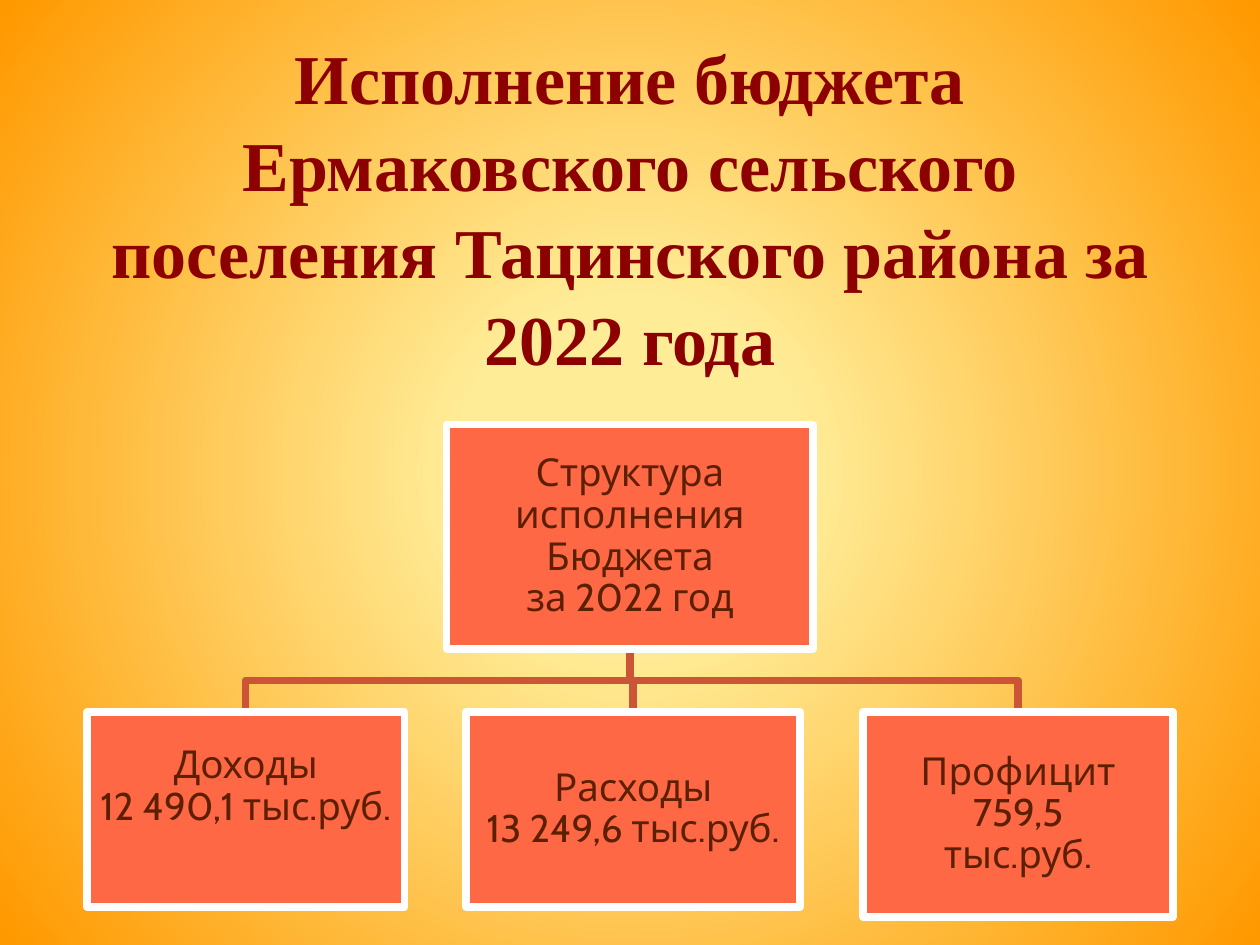
"""Builds a slide with the budget execution hierarchy of a rural settlement."""
from lxml import etree
from pptx import Presentation
from pptx.dml.color import RGBColor
from pptx.enum.shapes import MSO_SHAPE
from pptx.enum.text import MSO_ANCHOR, PP_ALIGN
from pptx.oxml import parse_xml
from pptx.util import Inches, Pt

RECTANGLE = MSO_SHAPE.RECTANGLE
MIDDLE = MSO_ANCHOR.MIDDLE
CENTER = PP_ALIGN.CENTER

PALE_YELLOW = RGBColor(0xFF, 0xEC, 0x97)
ORANGE = RGBColor(0xFF, 0x99, 0x00)
DARK_RED = RGBColor(0x8C, 0x00, 0x00)
CORAL = RGBColor(0xFF, 0x68, 0x45)
BRICK = RGBColor(0xCC, 0x55, 0x37)
BROWN = RGBColor(0x5C, 0x1F, 0x00)
WHITE = RGBColor(0xFF, 0xFF, 0xFF)

DRAWING = "http://schemas.openxmlformats.org/drawingml/2006/main"
RADIAL = (f'<a:path xmlns:a="{DRAWING}" path="circle">'
          '<a:fillToRect l="50000" t="50000" r="50000" b="50000"/></a:path>')

TITLE = "Исполнение бюджета Ермаковского сельского поселения Тацинского района за 2022 года"
ROOT = ["Структура", "исполнения", "Бюджета", "за 2022 год"]
CHILDREN = [
    {"lines": ["Доходы", "12 490,1 тыс.руб."], "left": 0.69, "width": 2.52, "height": 1.55, "bottom": 0.38},
    {"lines": ["Расходы", "13 249,6 тыс.руб."], "left": 3.7, "width": 2.65, "height": 1.55, "bottom": 0.02},
    {"lines": ["Профицит", "759,5", "тыс.руб."], "left": 6.85, "width": 2.46, "height": 1.63, "bottom": 0.02},
]

WIDTH, HEIGHT = 10, 7.5
ROOT_WIDTH, ROOT_HEIGHT, ROOT_TOP = 2.91, 1.78, 3.37
ROOT_BOTTOM = ROOT_TOP + ROOT_HEIGHT
CHILD_TOP = ROOT_BOTTOM + 0.5
INSET = 0.02
BORDER = Pt(4.33)


def style_text(frame, font, size, color, spacing, bold=False):
    frame.word_wrap = True
    frame.vertical_anchor = MIDDLE
    for para in frame.paragraphs:
        para.alignment = CENTER
        para.line_spacing = spacing
        para.space_before = Pt(0)
        for span in para.runs:
            span.font.name = font
            span.font.size = Pt(size)
            span.font.bold = bold
            span.font.color.rgb = color


def paint_background(slide):
    fill = slide.background.fill
    fill.gradient()
    for stop, position, color in zip(fill.gradient_stops, (0.22, 0.99), (PALE_YELLOW, ORANGE)):
        stop.position = position
        stop.color.rgb = color
    for linear in slide.element.findall(f".//{{{DRAWING}}}lin"):
        linear.getparent().replace(linear, parse_xml(etree.tostring(etree.fromstring(RADIAL))))


def add_branch(slide, child):
    center = WIDTH / 2
    child_center = child["left"] + child["width"] / 2
    bend = (ROOT_BOTTOM + CHILD_TOP) / 2
    points = [(center, bend), (child_center, bend), (child_center, CHILD_TOP)]
    builder = slide.shapes.build_freeform(Inches(center), Inches(ROOT_BOTTOM))
    builder.add_line_segments([(Inches(x), Inches(y)) for x, y in points], close=False)
    branch = builder.convert_to_shape()
    branch.shadow.inherit = False
    branch.fill.background()
    branch.line.color.rgb = BRICK
    branch.line.width = BORDER


def add_box(slide, lines, left, top, width, height, bottom=INSET):
    box = slide.shapes.add_shape(RECTANGLE, Inches(left), Inches(top), Inches(width), Inches(height))
    box.shadow.inherit = False
    box.fill.solid()
    box.fill.fore_color.rgb = CORAL
    box.line.color.rgb = WHITE
    box.line.width = BORDER
    frame = box.text_frame
    frame.margin_left = frame.margin_right = frame.margin_top = Inches(INSET)
    frame.margin_bottom = Inches(bottom)
    frame.text = "\n".join(lines)
    style_text(frame, "Cabin", 22, BROWN, 0.9)


def main():
    deck = Presentation()
    deck.slide_width, deck.slide_height = Inches(WIDTH), Inches(HEIGHT)
    slide = deck.slides.add_slide(deck.slide_layouts[5])
    paint_background(slide)

    title = slide.shapes.title
    title.left, title.top = Inches(0.5), Inches(0.3)
    title.width, title.height = Inches(9), Inches(2.66)
    title.text_frame.text = TITLE
    style_text(title.text_frame, "Times New Roman", 40, DARK_RED, 1.04, bold=True)

    for child in CHILDREN:
        add_branch(slide, child)
    add_box(slide, ROOT, (WIDTH - ROOT_WIDTH) / 2, ROOT_TOP, ROOT_WIDTH, ROOT_HEIGHT)
    for child in CHILDREN:
        add_box(slide, top=CHILD_TOP, **child)
    deck.save("out.pptx")


if __name__ == "__main__":
    main()
